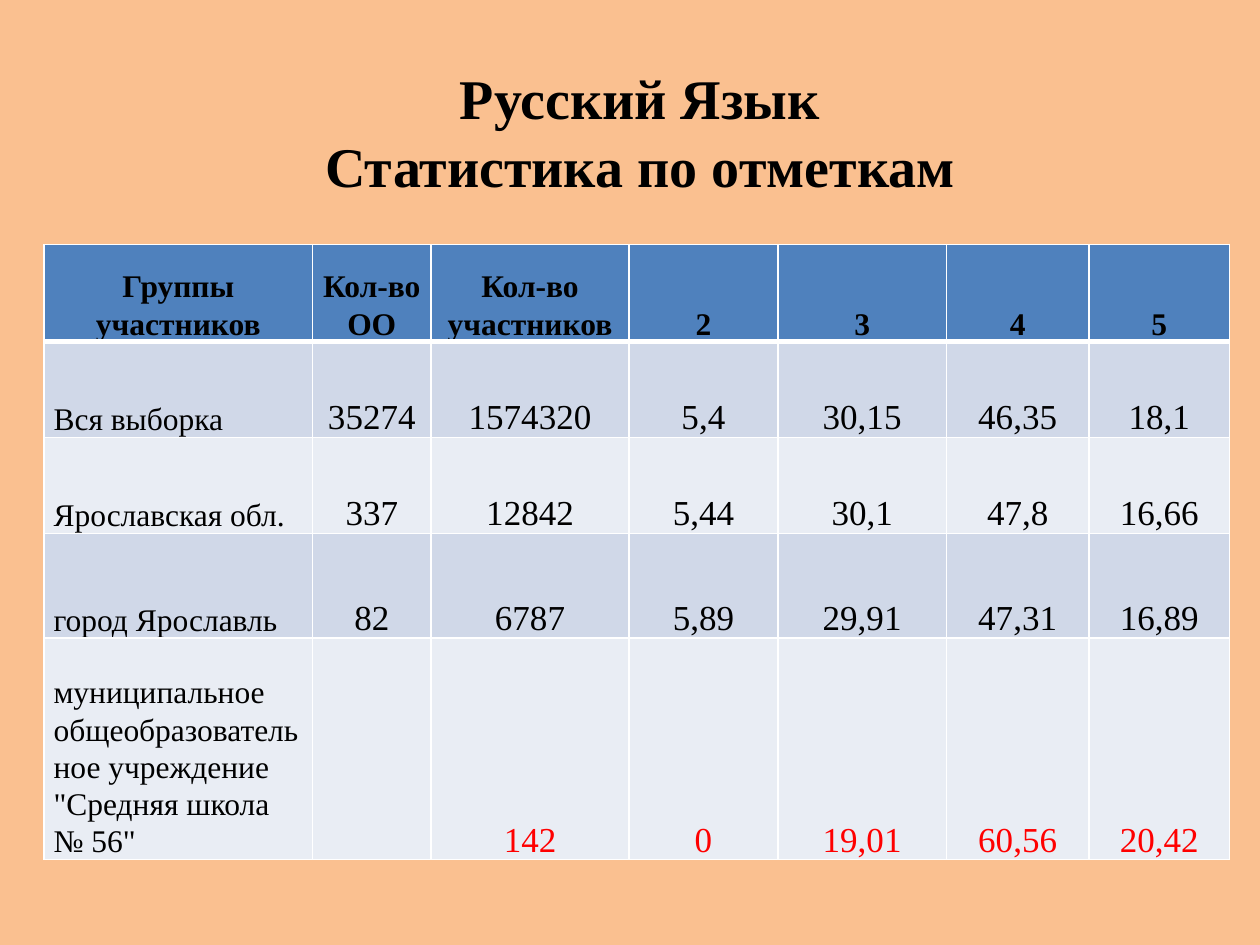
import pptx
import pptx.util
import pptx.dml.color
import pptx.enum.text
import pptx.oxml
import pptx.oxml.ns
from pptx.util import Cm

RGBColor = pptx.dml.color.RGBColor
PEACH = RGBColor(0xFA, 0xC0, 0x90)
BLUE = RGBColor(0x4F, 0x81, 0xBD)
BAND_DARK = RGBColor(0xD0, 0xD8, 0xE8)
BAND_LIGHT = RGBColor(0xE9, 0xED, 0xF4)
WHITE = RGBColor(0xFF, 0xFF, 0xFF)
BLACK = RGBColor(0, 0, 0)
RED = RGBColor(0xFF, 0, 0)
FONT = "Times New Roman"
LEFT = pptx.enum.text.PP_ALIGN.LEFT
CENTER = pptx.enum.text.PP_ALIGN.CENTER
MIDDLE = pptx.enum.text.MSO_ANCHOR.MIDDLE
BOTTOM = pptx.enum.text.MSO_ANCHOR.BOTTOM

TITLE = "Русский Язык\vСтатистика по отметкам"
GRADES = [
    ["Группы участников", "Кол-во ОО", "Кол-во участников", "2", "3", "4", "5"],
    ["Вся выборка", "35274", "1574320", "5,4", "30,15", "46,35", "18,1"],
    ["Ярославская обл.", "337", "12842", "5,44", "30,1", "47,8", "16,66"],
    ["город Ярославль", "82", "6787", "5,89", "29,91", "47,31", "16,89"],
    ['муниципальное общеобразовательное учреждение "Средняя школа № 56"',
     "", "142", "0", "19,01", "60,56", "20,42"],
]
COLUMN_WIDTHS = [5.41, 2.39, 3.99, 3, 3.4, 2.87, 2.84]
ROW_HEIGHTS = [1.96, 1.93, 1.93, 2.11, 4.47]


def write(frame, text, *, size, color=BLACK, bold=False, align=CENTER, spacing=None):
    paragraph = frame.paragraphs[0]
    paragraph.text = text
    paragraph.alignment = align
    paragraph.line_spacing = spacing
    for font in [run.font for run in paragraph.runs] or [paragraph.font]:
        font.name = FONT
        font.size = pptx.util.Pt(size)
        font.bold = bold
        font.color.rgb = color


def draw_borders(cell, bottom_width):
    properties = cell._tc.get_or_add_tcPr()
    widths = {"lnL": 1, "lnR": 1, "lnT": 1, "lnB": bottom_width}
    for position, (side, width) in enumerate(widths.items()):
        properties.insert(position, pptx.oxml.parse_xml(
            f'<a:{side} {pptx.oxml.ns.nsdecls("a")} w="{pptx.util.Pt(width)}">'
            f'<a:solidFill><a:srgbClr val="{WHITE}"/></a:solidFill></a:{side}>'))


def add_title(slide):
    title = slide.shapes.add_textbox(Cm(0.84), Cm(0.74), Cm(24.13), Cm(3.81))
    title.text_frame.word_wrap = True
    title.text_frame.vertical_anchor = MIDDLE
    write(title.text_frame, TITLE, size=32, bold=True)


def add_grades(slide):
    table = slide.shapes.add_table(
        len(GRADES), len(COLUMN_WIDTHS), Cm(0.89), Cm(4.93),
        Cm(sum(COLUMN_WIDTHS)), Cm(sum(ROW_HEIGHTS))).table
    table.horz_banding = False
    for column, width in zip(table.columns, COLUMN_WIDTHS):
        column.width = Cm(width)
    for r, (group, height) in enumerate(zip(GRADES, ROW_HEIGHTS)):
        table.rows[r].height = Cm(height)
        header, school = r == 0, r == len(GRADES) - 1
        fill = BLUE if header else BAND_DARK if r % 2 else BAND_LIGHT
        for c, value in enumerate(group):
            cell = table.cell(r, c)
            label = c == 0
            cell.fill.solid()
            cell.fill.fore_color.rgb = fill
            cell.vertical_anchor = BOTTOM
            cell.margin_left = cell.margin_right = Cm(0.19)
            cell.margin_top = cell.margin_bottom = 0
            write(cell.text_frame, value,
                  size=18 if header or label else 20,
                  color=RED if school and not label else BLACK,
                  bold=header,
                  align=LEFT if label and not header else CENTER,
                  spacing=1.07)
            draw_borders(cell, 3 if header else 1)


def main():
    deck = pptx.Presentation()
    deck.slide_width, deck.slide_height = Cm(25.4), Cm(19.05)
    slide = deck.slides.add_slide(deck.slide_layouts[6])
    slide.background.fill.solid()
    slide.background.fill.fore_color.rgb = PEACH
    add_title(slide)
    add_grades(slide)
    deck.save("out.pptx")


if __name__ == "__main__":
    main()
